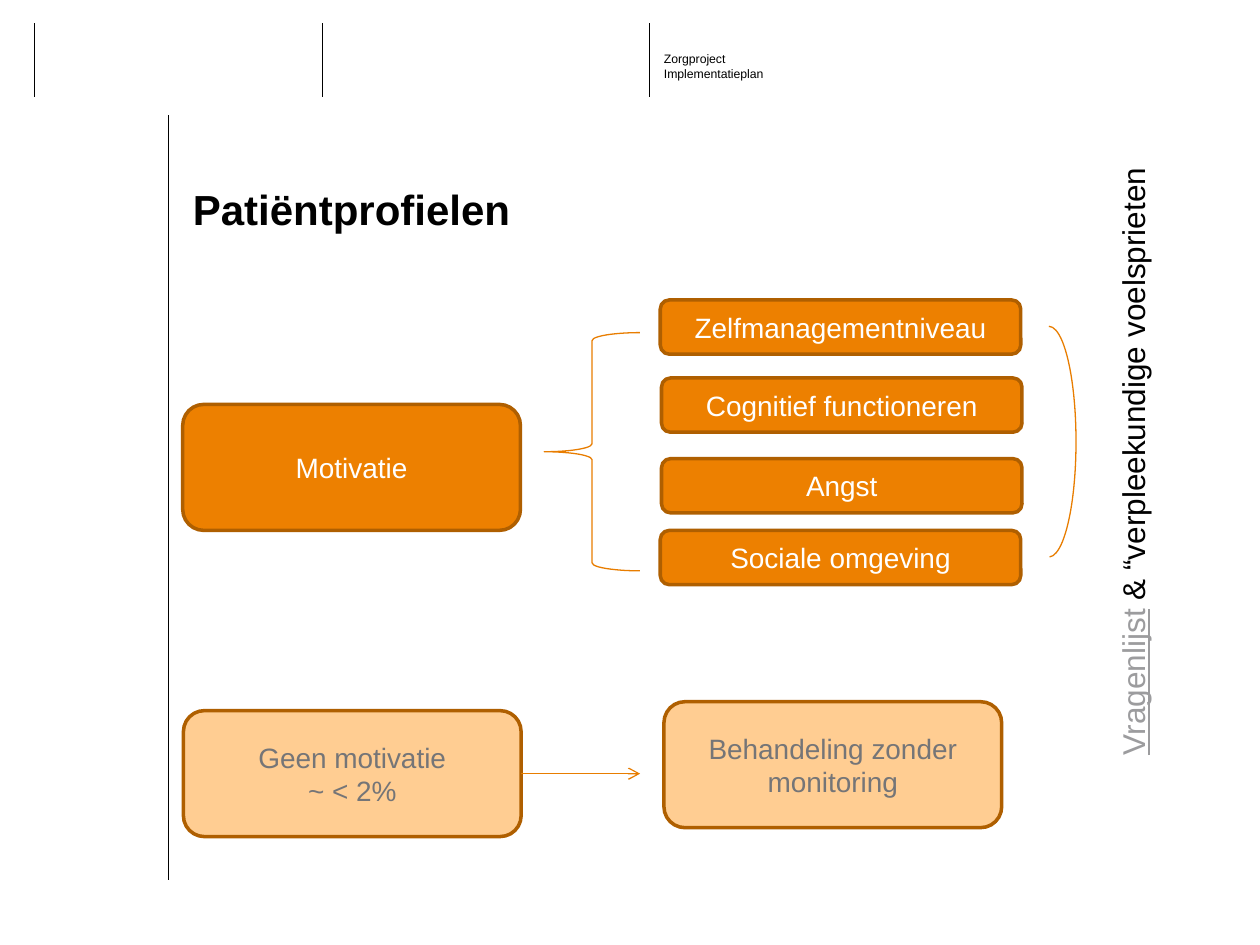
from dataclasses import dataclass

import pptx
import pptx.dml.color
import pptx.enum.shapes
import pptx.enum.text
import pptx.oxml
import pptx.oxml.ns
import pptx.util

Pt = pptx.util.Pt
RGBColor = pptx.dml.color.RGBColor
MSO_SHAPE = pptx.enum.shapes.MSO_SHAPE
PP_ALIGN = pptx.enum.text.PP_ALIGN
MSO_ANCHOR = pptx.enum.text.MSO_ANCHOR
MSO_AUTO_SIZE = pptx.enum.text.MSO_AUTO_SIZE

BLACK = RGBColor(0x00, 0x00, 0x00)
WHITE = RGBColor(0xFF, 0xFF, 0xFF)
ORANGE = RGBColor(0xED, 0x80, 0x00)
PALE_ORANGE = RGBColor(0xFF, 0xCD, 0x92)
BORDER = RGBColor(0xAF, 0x5F, 0x00)
ACCENT = RGBColor(0xE8, 0x7D, 0x00)
GREY = RGBColor(0x75, 0x75, 0x77)
LINK_GREY = RGBColor(0x9C, 0x9C, 0x9E)
FONT = "Arial"

BIG = (193, 72)
SMALL = (206, 31)


@dataclass
class Box:
    left: float
    top: float
    size: tuple[float, float]
    lines: list[str]
    fill: RGBColor = ORANGE
    color: RGBColor = WHITE


@dataclass
class Rule:
    x: float
    top: float
    bottom: float
    width: float = 0.25


RULES = [Rule(x, 13, 55.4) for x in (19.4, 184.3, 370.8)]
RULES.append(Rule(95.8, 65.5, 502.6, 0.1))

BOXES = [
    Box(104.4, 231.1, BIG, ["Motivatie"]),
    Box(377.3, 171.4, SMALL, ["Zelfmanagementniveau"]),
    Box(378, 216, SMALL, ["Cognitief functioneren"]),
    Box(378, 262.1, SMALL, ["Angst"]),
    Box(377.3, 303.1, SMALL, ["Sociale omgeving"]),
    Box(379.4, 401, BIG, ["Behandeling zonder monitoring"], PALE_ORANGE, GREY),
]
NO_MOTIVATION = Box(104.8, 406.1, BIG, ["Geen motivatie", "~ < 2%"], PALE_ORANGE, GREY)


def add_run(p, text: str, size: float, color: RGBColor, bold=False, underline=False):
    r = p.add_run()
    r.text = text
    r.font.name = FONT
    r.font.size = Pt(size)
    r.font.color.rgb = color
    r.font.bold = bold
    r.font.underline = underline


def clear_margins(tf):
    tf.margin_left = tf.margin_right = tf.margin_top = tf.margin_bottom = 0


def add_line(s, x1: float, y1: float, x2: float, y2: float, color: RGBColor, width: float):
    cx = s.shapes.add_connector(
        pptx.enum.shapes.MSO_CONNECTOR.STRAIGHT, Pt(x1), Pt(y1), Pt(x2), Pt(y2))
    cx.line.color.rgb = color
    cx.line.width = Pt(width)
    pptx.oxml.ns.qn("a:effectLst")
    cx._element.spPr.append(pptx.oxml.parse_xml(
        f"<a:effectLst {pptx.oxml.ns.nsdecls('a')}/>"))
    return cx


def add_arrowhead(cx):
    cx.line._get_or_add_ln().append(pptx.oxml.parse_xml(
        f"<a:tailEnd {pptx.oxml.ns.nsdecls('a')} type='arrow'/>"))


def add_box(s, box: Box):
    width, height = box.size
    sp = s.shapes.add_shape(MSO_SHAPE.ROUNDED_RECTANGLE, Pt(box.left), Pt(box.top),
                            Pt(width), Pt(height))
    sp.shadow.inherit = False
    sp.fill.solid()
    sp.fill.fore_color.rgb = box.fill
    sp.line.color.rgb = BORDER
    sp.line.width = Pt(2)
    tf = sp.text_frame
    tf.word_wrap = True
    tf.vertical_anchor = MSO_ANCHOR.MIDDLE
    for i, line in enumerate(box.lines):
        p = tf.add_paragraph() if i else tf.paragraphs[0]
        p.alignment = PP_ALIGN.CENTER
        add_run(p, line, 16, box.color)
    return sp


def add_outline(s, kind, left: float, top: float, width: float, height: float):
    """Add an unfilled bracket shape in the accent colour."""
    sp = s.shapes.add_shape(kind, Pt(left), Pt(top), Pt(width), Pt(height))
    sp.shadow.inherit = False
    sp.fill.background()
    sp.line.color.rgb = ACCENT
    sp.line.width = Pt(0.75)
    return sp


def add_title(s):
    title = s.shapes.title
    title.left, title.top, title.width, title.height = Pt(110.2), Pt(105.8), Pt(572.4), Pt(56.9)
    tf = title.text_frame
    clear_margins(tf)
    tf.word_wrap = True
    tf.vertical_anchor = MSO_ANCHOR.TOP
    p = tf.paragraphs[0]
    p.alignment = PP_ALIGN.LEFT
    p.line_spacing = Pt(28)
    add_run(p, "Patiëntprofielen", 24, BLACK, bold=True)


def add_header(s):
    tf = s.shapes.add_textbox(Pt(379.4), Pt(29.5), Pt(141.8), Pt(8.6)).text_frame
    clear_margins(tf)
    tf.word_wrap = True
    p = tf.paragraphs[0]
    add_run(p, "Zorgproject", 7, BLACK)
    p.add_line_break()
    add_run(p, "Implementatieplan", 7, BLACK)


def add_side_label(s):
    sp = s.shapes.add_textbox(Pt(470.9), Pt(247.7), Pt(352.8), Pt(28.8))
    sp.rotation = 270
    tf = sp.text_frame
    tf.word_wrap = False
    tf.auto_size = MSO_AUTO_SIZE.SHAPE_TO_FIT_TEXT
    p = tf.paragraphs[0]
    add_run(p, "Vragenlijst", 18, LINK_GREY, underline=True)
    add_run(p, " & “verpleekundige voelsprieten", 18, BLACK)


def main():
    prs = pptx.Presentation()
    prs.slide_width, prs.slide_height = Pt(720), Pt(540)
    s = prs.slides.add_slide(prs.slide_layouts[5])

    for rule in RULES:
        add_line(s, rule.x, rule.bottom, rule.x, rule.top, BLACK, rule.width)
    add_title(s)
    add_header(s)

    for box in BOXES:
        add_box(s, box)
    add_outline(s, MSO_SHAPE.LEFT_BRACE, 311, 190.1, 54.7, 136.1)
    arc = add_outline(s, MSO_SHAPE.ARC, 583.9, 186.5, 31, 131.8)
    arc.adjustments[0] = 162
    arc.adjustments[1] = 53.8
    add_side_label(s)

    no_motivation = add_box(s, NO_MOTIVATION)
    arrow = add_line(s, 297.8, 442.1, 365.8, 442.1, ACCENT, 0.75)
    arrow.begin_connect(no_motivation, 3)
    add_arrowhead(arrow)

    prs.save("out.pptx")


if __name__ == "__main__":
    main()
